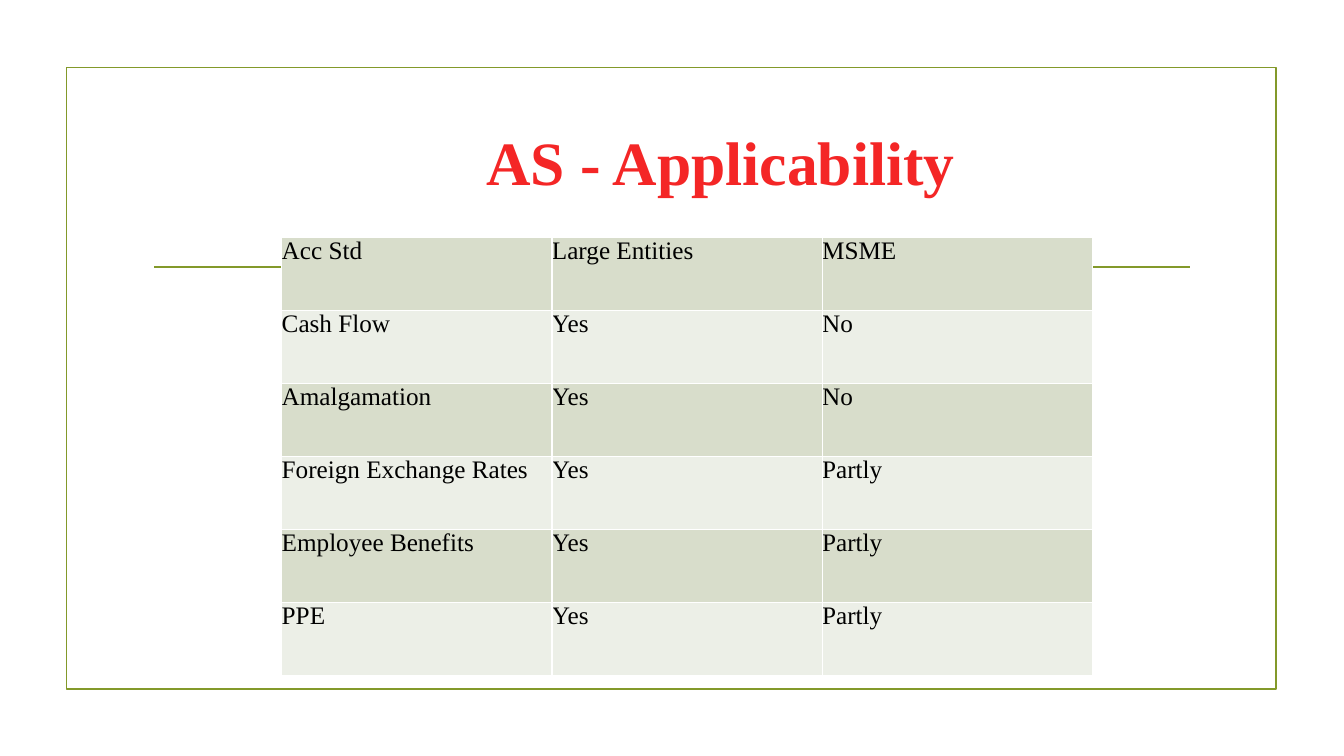
from lxml import etree
from pptx import Presentation
from pptx.dml.color import RGBColor
from pptx.enum import shapes, text
from pptx.oxml import ns
from pptx.util import Cm, Pt

TITLE = "AS - Applicability"
ROWS = [
    ("Acc Std", "Large Entities", "MSME"),
    ("Cash Flow", "Yes", "No"),
    ("Amalgamation", "Yes", "No"),
    ("Foreign Exchange Rates", "Yes", "Partly"),
    ("Employee Benefits", "Yes", "Partly"),
    ("PPE", "Yes", "Partly"),
]
BAND_FILLS = ("D8DDCB", "ECEFE7")
GREEN, RED, BLACK, WHITE = "83992A", "F42626", "000000", "FFFFFF"
FONT = "Times New Roman"
COLUMN_WIDTH, ROW_HEIGHT = 6.81, 1.84


def color(code):
    return RGBColor.from_string(code)


def write(frame, words, size, ink, bold=False, align=text.PP_ALIGN.LEFT, inset=0.0):
    frame.word_wrap = True
    frame.margin_left = frame.margin_right = Cm(inset)
    frame.margin_top = frame.margin_bottom = Cm(inset)
    para = frame.paragraphs[0]
    para.alignment = align
    span = para.add_run()
    span.text = words
    span.font.name = FONT
    span.font.size = Pt(size)
    span.font.bold = bold
    span.font.color.rgb = color(ink)


def outline(shape):
    shape.line.color.rgb = color(GREEN)
    shape.line.width = Pt(1.25)


def add_borders(cell, ink, points):
    """Line all four sides; borders must come before the cell's fill."""
    properties = cell._tc.get_or_add_tcPr()
    for side in ("lnL", "lnR", "lnT", "lnB"):
        border = etree.SubElement(properties, ns.qn(f"a:{side}"), w=str(Pt(points)))
        fill = etree.SubElement(border, ns.qn("a:solidFill"))
        etree.SubElement(fill, ns.qn("a:srgbClr"), val=ink)


def add_decoration(page):
    frame = page.shapes.add_shape(
        shapes.MSO_SHAPE.RECTANGLE, Cm(1.68), Cm(1.7), Cm(30.48), Cm(15.67))
    frame.shadow.inherit = False
    frame.fill.background()
    outline(frame)

    rule = page.shapes.add_connector(
        shapes.MSO_CONNECTOR.STRAIGHT, Cm(3.89), Cm(6.73), Cm(30), Cm(6.73))
    outline(rule)
    etree.SubElement(rule._element.spPr, ns.qn("a:effectLst"))


def add_title(page):
    box = page.shapes.add_textbox(Cm(4.83), Cm(2.24), Cm(26.67), Cm(3.63))
    box.text_frame.vertical_anchor = text.MSO_ANCHOR.MIDDLE
    write(box.text_frame, TITLE, 44, RED, bold=True,
          align=text.PP_ALIGN.CENTER, inset=0.13)


def add_standards_table(page):
    columns = len(ROWS[0])
    table = page.shapes.add_table(
        len(ROWS), columns, Cm(7.1), Cm(5.98),
        Cm(COLUMN_WIDTH * columns), Cm(ROW_HEIGHT * len(ROWS))).table
    for column in table.columns:
        column.width = Cm(COLUMN_WIDTH)
    for number, (row, values) in enumerate(zip(table.rows, ROWS)):
        row.height = Cm(ROW_HEIGHT)
        for cell, value in zip(row.cells, values):
            add_borders(cell, WHITE, 1)
            cell.fill.solid()
            cell.fill.fore_color.rgb = color(BAND_FILLS[number % 2])
            cell.margin_left = cell.margin_right = 0
            cell.margin_top = cell.margin_bottom = 0
            write(cell.text_frame, value, 18, BLACK)


def main():
    deck = Presentation()
    deck.slide_width, deck.slide_height = Cm(33.87), Cm(19.05)
    page = deck.slides.add_slide(deck.slide_layouts[6])
    add_decoration(page)
    add_title(page)
    add_standards_table(page)
    deck.save("out.pptx")


if __name__ == "__main__":
    main()
